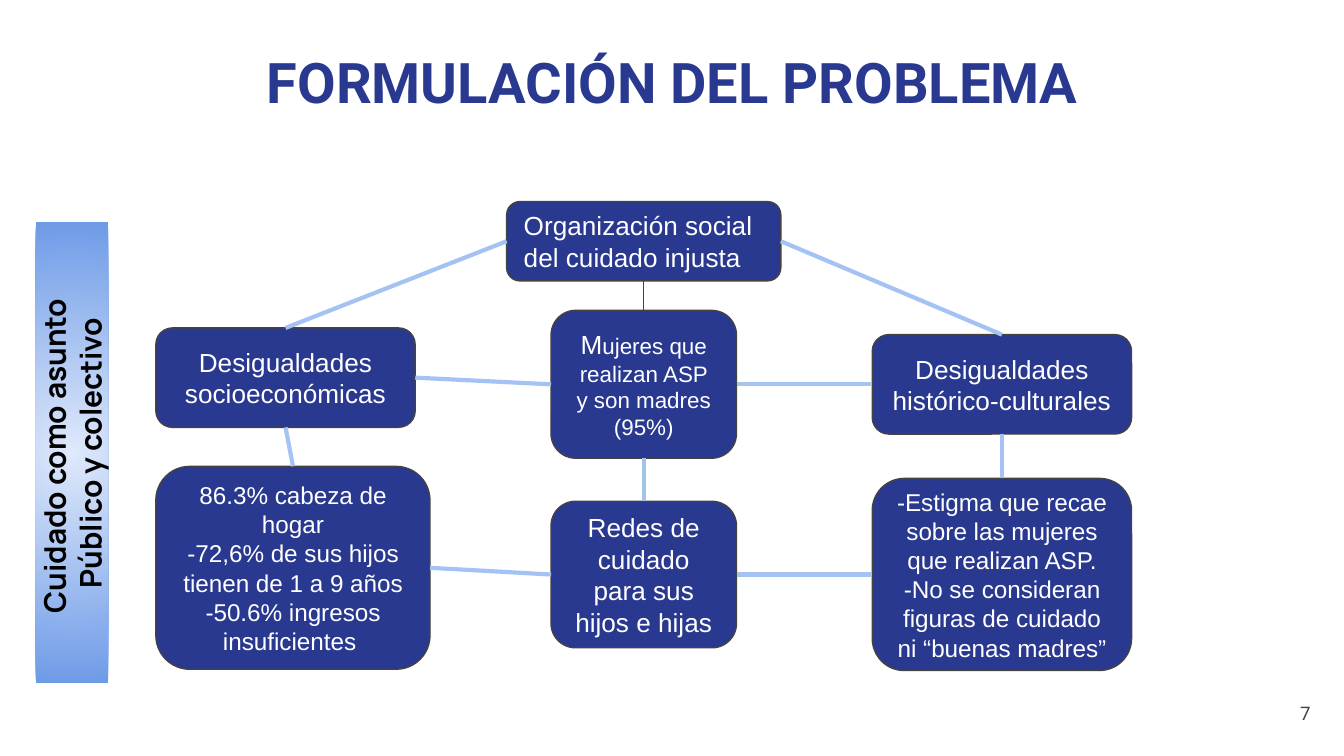
"""Build the problem statement slide with its diagram of linked boxes."""
import pptx
import pptx.dml.color
import pptx.enum.shapes
import pptx.enum.text
import pptx.oxml
import pptx.util
from lxml import etree

Inches = pptx.util.Inches
Pt = pptx.util.Pt
ALIGN = pptx.enum.text.PP_ALIGN
ANCHOR = pptx.enum.text.MSO_ANCHOR
SHAPE = pptx.enum.shapes.MSO_SHAPE

NAVY, GREY, WHITE, BLACK = "2A3990", "434343", "FFFFFF", "000000"
LIGHT_BLUE, SKY_BLUE = "A4C2F4", "9FC5E8"
SITES = {"top": 0, "left": 1, "bottom": 2, "right": 3}

TITLE = "FORMULACIÓN DEL PROBLEMA"
PAGE_NUMBER = "7"
SIDEBAR_LINES = ["Cuidado como asunto ", "Público y colectivo"]
SIDEBAR_AREA = (-1.18, 3.1, 3.43, 0.54)
SIDEBAR_STOPS = [(0, "DFE9FB"), (100000, "6E9BE7")]

BOXES = {
    "organization": ((3.77, 1.5, 2.04, 0.59), ALIGN.LEFT,
                     [[("Organización social del cuidado injusta", 14)]]),
    "economic": ((1.16, 2.44, 1.93, 0.74), ALIGN.CENTER,
                 [[("Desigualdades socioeconómicas", 14)]]),
    "cultural": ((6.49, 2.49, 1.93, 0.74), ALIGN.CENTER,
                 [[("Desigualdades histórico-culturales", 14)]]),
    "mothers": ((4.1, 2.31, 1.38, 1.1), ALIGN.CENTER,
                [[("M", 14), ("ujeres que realizan ASP y son madres (95%)", 12)]]),
    "networks": ((4.1, 3.73, 1.38, 1.09), ALIGN.CENTER,
                 [[("Redes de cuidado para sus hijos e hijas", 14)]]),
    "figures": ((1.16, 3.47, 2.04, 1.51), ALIGN.CENTER,
                [[("86.3% cabeza de hogar", 13)],
                 [("-72,6% de sus hijos tienen de 1 a 9 años", 13)],
                 [("-50.6% ingresos insuficientes ", 13)]]),
    "stigma": ((6.49, 3.56, 1.93, 1.43), ALIGN.CENTER,
               [[("-Estigma que recae sobre las mujeres que realizan ASP.", 13)],
                [("-No se consideran figuras de cuidado ni “buenas madres”", 13)]]),
}

LINKS = [
    ("economic", "top", "organization", "left", LIGHT_BLUE, 2.25),
    ("cultural", "top", "organization", "right", LIGHT_BLUE, 2.25),
    ("economic", "right", "mothers", "left", LIGHT_BLUE, 2.25),
    ("mothers", "right", "cultural", "left", LIGHT_BLUE, 2.25),
    ("figures", "top", "economic", "bottom", LIGHT_BLUE, 2.25),
    ("figures", "right", "networks", "left", LIGHT_BLUE, 2.25),
    ("networks", "top", "mothers", "bottom", SKY_BLUE, 2.25),
    ("networks", "right", "stigma", "left", LIGHT_BLUE, 2.25),
    ("mothers", "top", "organization", "bottom", GREY, 0.75),
    ("stigma", "top", "cultural", "bottom", LIGHT_BLUE, 2.25),
]


def color(value):
    return pptx.dml.color.RGBColor.from_string(value)


def prepare_frame(box, anchor):
    frame = box.text_frame
    frame.word_wrap = True
    frame.auto_size = pptx.enum.text.MSO_AUTO_SIZE.NONE
    frame.vertical_anchor = anchor
    frame.margin_left = frame.margin_right = Inches(0.1)
    frame.margin_top = frame.margin_bottom = Inches(0.1)
    return frame


def add_span(para, text, size, font, shade, bold=False):
    span = para.add_run()
    span.text = text
    span.font.size = Pt(size)
    span.font.name = font
    span.font.bold = bold
    span.font.color.rgb = color(shade)


def add_title(page):
    title = page.shapes.title
    title.left, title.top, title.width, title.height = map(Inches, (1.5, 0.25, 7.01, 0.92))
    para = prepare_frame(title, ANCHOR.TOP).paragraphs[0]
    para.alignment = ALIGN.CENTER
    add_span(para, TITLE, 30, "Roboto", NAVY, True)


def add_page_number(page):
    box = page.shapes.add_textbox(*map(Inches, (9.25, 5.09, 0.6, 0.43)))
    para = prepare_frame(box, ANCHOR.MIDDLE).paragraphs[0]
    para.alignment = ALIGN.RIGHT
    add_span(para, PAGE_NUMBER, 10, "Roboto", GREY)


def add_box(page, area, alignment, paragraphs):
    box = page.shapes.add_shape(SHAPE.ROUNDED_RECTANGLE, *map(Inches, area))
    box.shadow.inherit = False
    box.fill.solid()
    box.fill.fore_color.rgb = color(NAVY)
    box.line.color.rgb = color(GREY)
    box.line.width = Pt(0.75)
    frame = prepare_frame(box, ANCHOR.MIDDLE)
    for index, spans in enumerate(paragraphs):
        para = frame.add_paragraph() if index else frame.paragraphs[0]
        para.alignment = alignment
        for text, size in spans:
            add_span(para, text, size, "Arial", WHITE)
    return box


def add_link(page, start, start_side, end, end_side, shade, width):
    link = page.shapes.add_connector(pptx.enum.shapes.MSO_CONNECTOR.STRAIGHT, 0, 0, 0, 0)
    link.begin_connect(start, SITES[start_side])
    link.end_connect(end, SITES[end_side])
    link.line.color.rgb = color(shade)
    link.line.width = Pt(width)
    etree.SubElement(link._element.spPr, pptx.oxml.ns.qn("a:effectLst"))


def fill_radially(shape, stops):
    marks = "".join(f'<a:gs pos="{place}"><a:srgbClr val="{shade}"/></a:gs>'
                    for place, shade in stops)
    gradient = pptx.oxml.parse_xml(
        f'<a:gradFill {pptx.oxml.ns.nsdecls("a")}><a:gsLst>{marks}</a:gsLst>'
        '<a:path path="circle"><a:fillToRect l="50000" t="50000" r="50000" b="50000"/>'
        '</a:path></a:gradFill>')
    shape._element.spPr.find(pptx.oxml.ns.qn("a:prstGeom")).addnext(gradient)


def add_sidebar(page):
    sidebar = page.shapes.add_shape(SHAPE.RECTANGLE, *map(Inches, SIDEBAR_AREA))
    sidebar.rotation = 270
    sidebar.shadow.inherit = False
    sidebar.line.fill.background()
    fill_radially(sidebar, SIDEBAR_STOPS)
    para = prepare_frame(sidebar, ANCHOR.MIDDLE).paragraphs[0]
    para.alignment = ALIGN.CENTER
    for index, text in enumerate(SIDEBAR_LINES):
        if index:
            para.add_line_break()
        add_span(para, text, 16, "Manrope", BLACK, True)


def main():
    deck = pptx.Presentation()
    deck.slide_width = Inches(10)
    deck.slide_height = deck.slide_width * 9 // 16
    page = deck.slides.add_slide(deck.slide_layouts[5])
    add_title(page)
    add_page_number(page)
    boxes = {name: add_box(page, *content) for name, content in BOXES.items()}
    add_sidebar(page)
    for start, start_side, end, end_side, shade, width in LINKS:
        add_link(page, boxes[start], start_side, boxes[end], end_side, shade, width)
    deck.save("out.pptx")


if __name__ == "__main__":
    main()
